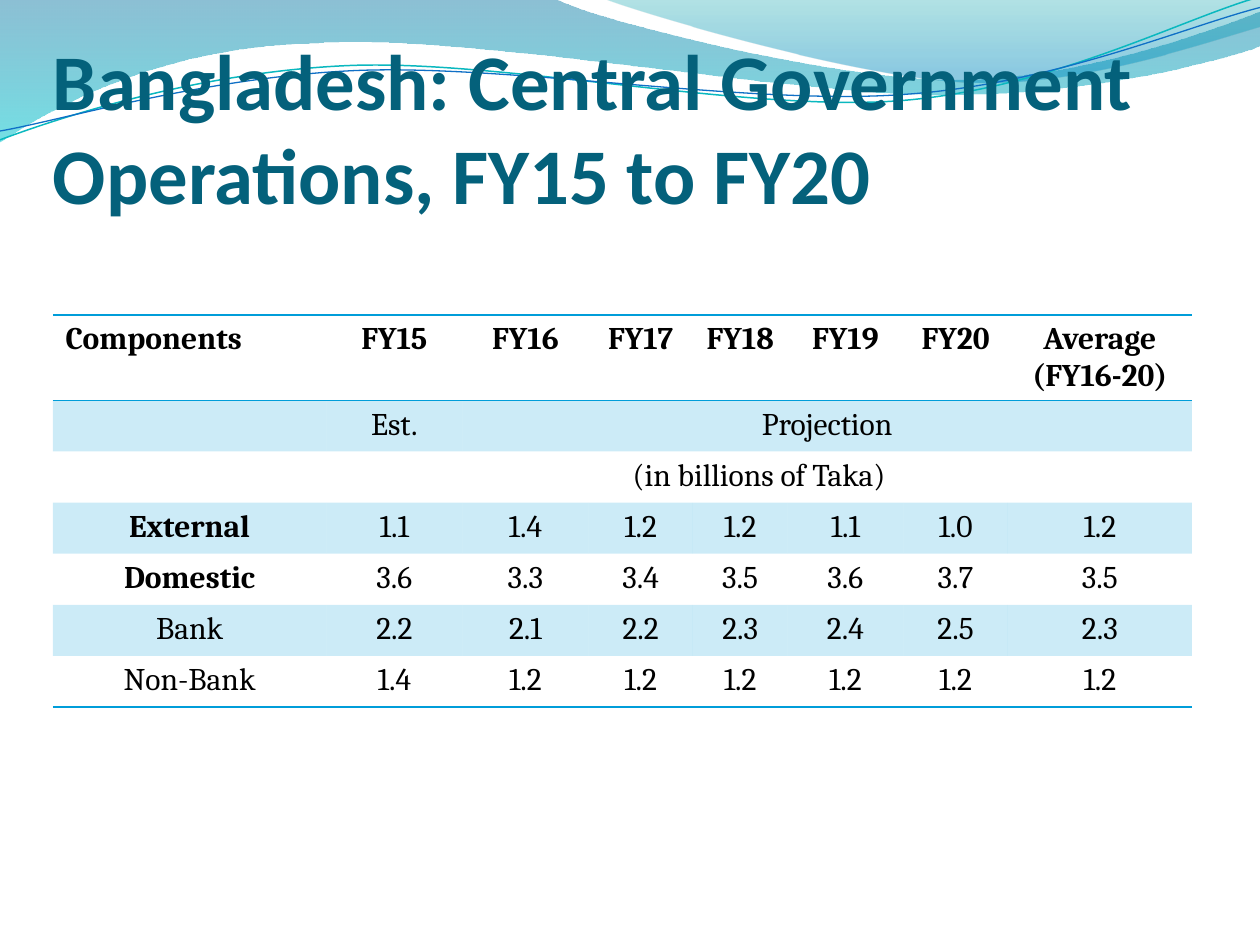
import math

from lxml import etree
from pptx import Presentation
from pptx import util as u
from pptx.dml.color import RGBColor
from pptx.enum import text
from pptx.oxml.ns import qn

HEAD = ["Components", "FY15", "FY16", "FY17", "FY18", "FY19", "FY20",
        "Average\n(FY16-20)"]
ROWS = [
    HEAD,
    ["", "Est.", "Projection"],
    ["", "(in billions of Taka)"],
    ["External", "1.1", "1.4", "1.2", "1.2", "1.1", "1.0", "1.2"],
    ["Domestic", "3.6", "3.3", "3.4", "3.5", "3.6", "3.7", "3.5"],
    ["Bank", "2.2", "2.1", "2.2", "2.3", "2.4", "2.5", "2.3"],
    ["Non-Bank", "1.4", "1.2", "1.2", "1.2", "1.2", "1.2", "1.2"],
]
WIDTHS = [2.17, 1.08, 1, 0.83, 0.75, 0.92, 0.83, 1.46]
BOLD = {"External", "Domestic", *HEAD}

BROAD = [
    [(0, 0)],
    [(4.4, -0.01)],
    [(4.76, 0.17), (6.64, 0.63), (7.58, 0.63)],
    [(8.53, 0.63), (9.58, 0.26), (10, 0.09)],
    [(10.01, 0.36)],
    [(9.83, 0.44), (8.7, 0.76), (7.46, 0.75)],
    [(6.22, 0.75), (3.82, 0.28), (2.57, 0.34)],
    [(1.29, 0.36), (0.46, 0.83), (-0.01, 1.13)],
    [(0, 0)],
]
CREST = [
    [(4.79, -0.01)],
    [(5.09, 0.11), (6.82, 0.62), (7.69, 0.65)],
    [(8.56, 0.69), (9.61, 0.32), (10, 0.21)],
    [(10, 0)],
    [(4.79, -0.01)],
]
TEAL = [
    [(0, 1.11)],
    [(0.48, 0.93), (1.58, 0.57), (2.77, 0.52)],
    [(3.95, 0.47), (5.93, 0.89), (7.13, 0.8)],
    [(8.33, 0.71), (9.38, 0.15), (9.98, -0.02)],
]
BLUE = [
    [(0, 1.04)],
    [(0.47, 0.96), (1.64, 0.61), (2.83, 0.56)],
    [(4.03, 0.51), (5.97, 0.84), (7.17, 0.75)],
    [(8.36, 0.67), (9.41, 0.21), (10, 0.06)],
]


def rgb(code):
    return RGBColor.from_string(code)


def turn(path, mid, angle):
    cos, sin = math.cos(math.radians(angle)), math.sin(math.radians(angle))
    return [[(mid[0] + (x - mid[0]) * cos - (y - mid[1]) * sin,
              mid[1] + (x - mid[0]) * sin + (y - mid[1]) * cos)
             for x, y in part] for part in path]


def bend(shape, path):
    legs = iter(list(shape.element.iter(qn("a:lnTo"))))
    for part in path[1:]:
        leg = next(legs)
        if len(part) == 3:
            leg.tag = qn("a:cubicBezTo")
            for _ in part[1:]:
                extra = next(legs)
                leg.append(extra[0])
                extra.getparent().remove(extra)


def fade(node, alpha):
    for tint in node.iter(qn("a:srgbClr")):
        etree.SubElement(tint, qn("a:alpha"), val=str(alpha * 1000))


class Deck:
    accent = "009DD9"
    ink = "000000"
    plain = "{2D5ABB26-0587-4C30-8999-92F81FD0307C}"

    def __init__(self):
        self.show = Presentation()
        self.show.slide_width = u.Inches(10)
        self.show.slide_height = u.Inches(7.5)
        self.slide = self.show.slides.add_slide(self.show.slide_layouts[5])

    def font(self, para, face, size, color, bold):
        for run in para.runs:
            run.font.name = face
            run.font.size = u.Pt(size)
            run.font.bold = bold
            run.font.color.rgb = rgb(color)

    def curve(self, path, close):
        dots = [(u.Inches(x), u.Inches(y)) for part in path for x, y in part]
        pen = self.slide.shapes.build_freeform(*dots[0])
        pen.add_line_segments(dots[1:], close=close)
        shape = pen.convert_to_shape()
        bend(shape, path)
        shape.shadow.inherit = False
        return shape

    def wave(self, path, stops):
        shape = self.curve(path, True)
        shape.line.fill.background()
        shape.fill.gradient()
        shape.fill.gradient_angle = 270
        grads = shape.element.iter(qn("a:gs"))
        for stop, node, (pos, color, alpha) in zip(shape.fill.gradient_stops, grads, stops):
            stop.position = pos
            stop.color.rgb = rgb(color)
            fade(node, alpha)

    def line(self, path, mid, color, width):
        tilt = 2.7
        shape = self.curve(turn(path, mid, tilt), False)
        shape.rotation = -tilt
        shape.fill.background()
        shape.line.color.rgb = rgb(color)
        shape.line.width = u.Pt(width)

    def title(self, words):
        box = self.slide.shapes.title
        box.element.getparent().append(box.element)
        box.left, box.top = u.Inches(0.42), u.Inches(0.42)
        box.width, box.height = u.Inches(9), u.Inches(1.33)
        frame = box.text_frame
        frame.text = words
        frame.word_wrap = True
        frame.auto_size = text.MSO_AUTO_SIZE.NONE
        frame.vertical_anchor = text.MSO_ANCHOR.BOTTOM
        frame.margin_left = frame.margin_right = frame.margin_bottom = 0
        frame.margin_top = u.Inches(0.05)
        para = frame.paragraphs[0]
        para.alignment = text.PP_ALIGN.LEFT
        self.font(para, "Calibri", 45, "04617B", True)

    def rule(self, cell, sides):
        props = cell._tc.get_or_add_tcPr()
        for spot, side in enumerate(sides):
            edge = etree.Element(qn(f"a:ln{side}"), w=str(u.Pt(1)))
            fill = etree.SubElement(edge, qn("a:solidFill"))
            etree.SubElement(fill, qn("a:srgbClr"), val=self.accent)
            props.insert(spot, edge)

    def cell(self, cell, words, left, band):
        cell.text = words
        for para in cell.text_frame.paragraphs:
            para.alignment = text.PP_ALIGN.LEFT if left else text.PP_ALIGN.CENTER
            self.font(para, "Cambria", 18, self.ink, words in BOLD)
        if band:
            cell.fill.solid()
            cell.fill.fore_color.rgb = rgb(self.accent)
            fade(cell._tc.tcPr, 20)
        else:
            cell.fill.background()

    def table(self, rows, widths):
        last = len(widths) - 1
        frame = self.slide.shapes.add_table(
            len(rows), len(widths), u.Inches(0.42), u.Inches(2.5),
            u.Inches(sum(widths)), u.Inches(2.84))
        grid = frame.table
        grid.first_row = grid.horz_banding = False
        next(frame.element.iter(qn("a:tableStyleId"))).text = self.plain
        for col, width in zip(grid.columns, widths):
            col.width = u.Inches(width)
        for r, row in enumerate(rows):
            end = len(row) - 1
            if end < last:
                grid.cell(r, end).merge(grid.cell(r, last))
            for c in range(last + 1):
                cell = grid.cell(r, c)
                words = row[c] if c <= end else ""
                self.cell(cell, words, r == c == 0, r % 2)
                if r == 0:
                    self.rule(cell, "TB")
                elif r == len(rows) - 1:
                    self.rule(cell, "B")


def main():
    deck = Deck()
    deck.wave(BROAD, [(0, "0074A1", 45), (1, "00C6CF", 55)])
    deck.wave(CREST, [(0, "00A1A9", 30), (0.8, "008BBF", 45)])
    deck.line(TEAL, (4.99, 0.58), "0AB8BF", 0.85)
    deck.line(BLUE, (5, 0.59), "0F6FC6", 0.75)
    deck.title("Bangladesh: Central Government Operations, FY15 to FY20")
    deck.table(ROWS, WIDTHS)
    deck.show.save("out.pptx")


if __name__ == "__main__":
    main()
